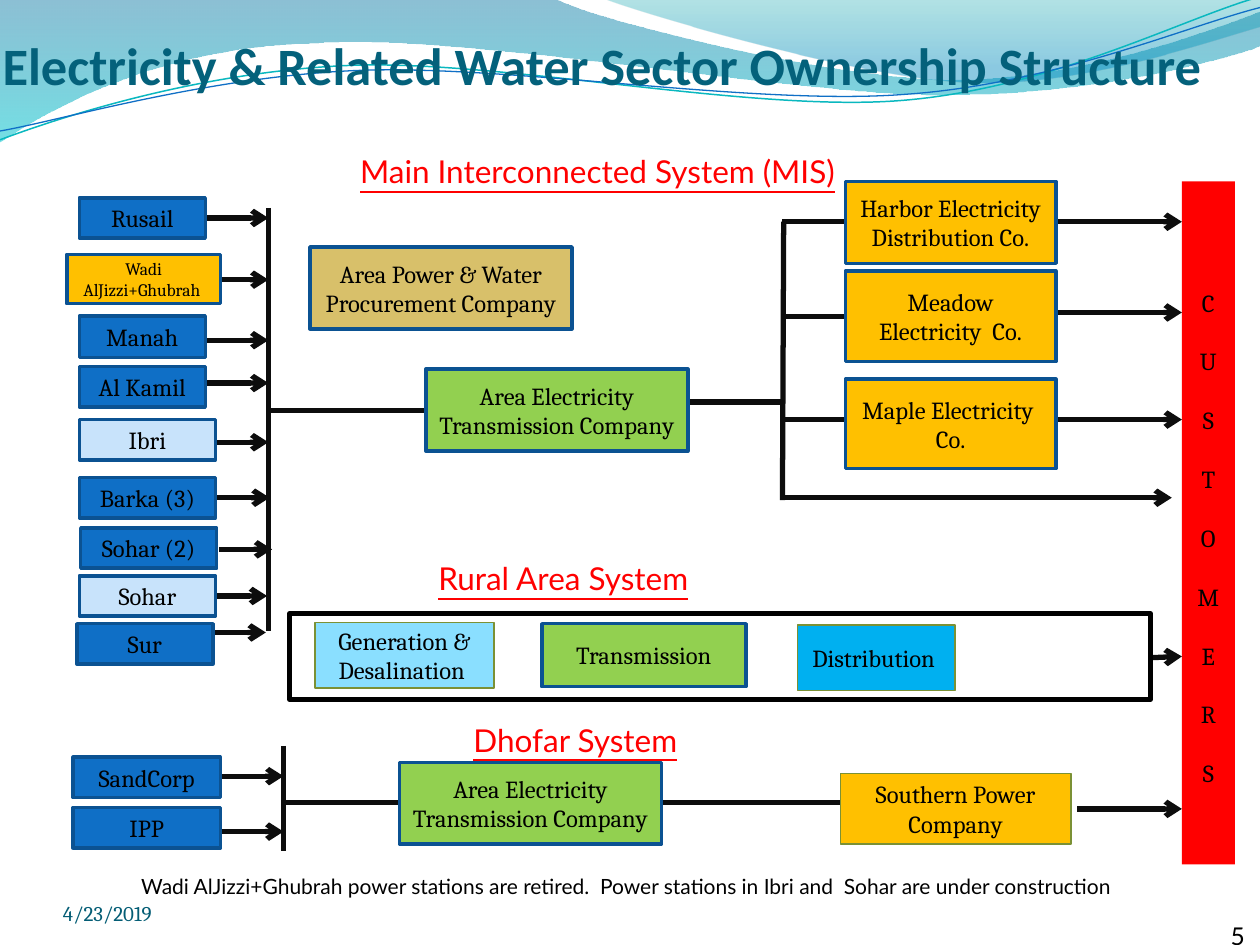
"""Build the electricity and water sector ownership slide."""
import dataclasses

import pptx
import pptx.dml.color
import pptx.enum.shapes
import pptx.enum.text
import pptx.oxml
import pptx.oxml.ns
import pptx.util

Inches = pptx.util.Inches
ALIGN = pptx.enum.text.PP_ALIGN
ANCHOR = pptx.enum.text.MSO_ANCHOR
A_NS = pptx.oxml.ns.nsdecls("a")


@dataclasses.dataclass(frozen=True)
class Theme:
    """Colours, fonts and type sizes of the slide."""
    title: str = "04617B"
    date: str = "045D75"
    ink: str = "000000"
    wire: str = "0D0D0D"
    edge: str = "0B5292"
    olive: str = "7B9135"
    blue: str = "0F6FC6"
    pale: str = "C8E3FB"
    amber: str = "FFC000"
    green: str = "92D050"
    sand: str = "D8C06A"
    aqua: str = "8ADFFF"
    sky: str = "00B0F0"
    red: str = "FF0000"
    teal: str = "0AB8BF"
    wave_blue: str = "0074A1"
    wave_cyan: str = "00C6CF"
    wave_teal: str = "00A1A9"
    wave_sky: str = "008BBF"
    serif: str = "Cambria"
    sans: str = "Lato"
    head: str = "Calibri"
    title_size: int = 30
    heading_size: int = 18
    label_size: int = 14
    note_size: int = 12
    small_size: int = 10


T = Theme()
COMPANY = "Area Electricity Transmission Company"
PLANTS = [
    ("Rusail", 0.63, 1.57, 1, 0.32, T.blue, 1.63, 2.13, 1.73),
    ("Wadi AlJizzi+Ghubrah ", 0.53, 2.02, 1.22, 0.39, T.amber, 1.74, 2.13, 2.22),
    ("Manah", 0.63, 2.51, 1, 0.33, T.blue, 1.63, 2.13, 2.7),
    ("Al Kamil", 0.63, 2.91, 1, 0.32, T.blue, 1.63, 2.13, 3.04),
    ("Ibri", 0.63, 3.33, 1.08, 0.32, T.pale, 1.71, 2.13, 3.51),
    ("Barka (3)", 0.63, 3.79, 1.08, 0.32, T.blue, 1.72, 2.14, 3.95),
    ("Sohar (2)", 0.64, 4.19, 1.08, 0.32, T.blue, 1.74, 2.16, 4.36),
    ("Sohar", 0.63, 4.57, 1.08, 0.32, T.pale, 1.71, 2.12, 4.73),
    ("Sur", 0.61, 4.95, 1.08, 0.32, T.blue, 1.7, 2.11, 5.02),
]
DHOFAR_PLANTS = [
    ("SandCorp", 0.58, 6.01, 1.17, 0.32, T.blue, 1.75, 2.25, 6.16),
    ("IPP", 0.58, 6.41, 1.17, 0.32, T.blue, 1.75, 2.25, 6.6),
]
DISTRIBUTORS = [
    ("Harbor Electricity Distribution Co.", 1.44, 0.65, 1.76, 1.76),
    ("Meadow Electricity  Co.", 2.15, 0.72, 2.51, 2.48),
    ("Maple Electricity  Co.", 3.01, 0.71, 3.33, 3.33),
]
WAVES = [
    ((0, 0),
     [[(4.4, -0.01)],
      [(4.76, 0.17), (6.64, 0.63), (7.58, 0.63)], [(8.53, 0.63), (9.58, 0.26), (10, 0.09)],
      [(10.01, 0.36)],
      [(9.83, 0.44), (8.7, 0.76), (7.46, 0.75)], [(6.22, 0.75), (3.82, 0.28), (2.57, 0.34)],
      [(1.29, 0.36), (0.46, 0.83), (-0.01, 1.13)], [(0, 0)]],
     [(0, T.wave_blue, 45), (1, T.wave_cyan, 55)]),
    ((4.79, -0.01),
     [[(5.09, 0.11), (6.82, 0.62), (7.69, 0.65)], [(8.56, 0.69), (9.61, 0.32), (10, 0.21)],
      [(10, 0)], [(4.79, -0.01)]],
     [(0, T.wave_teal, 30), (0.8, T.wave_sky, 45)]),
]
STRANDS = [
    ((0, 1.11),
     [[(0.48, 0.93), (1.58, 0.57), (2.77, 0.52)], [(3.95, 0.47), (5.93, 0.89), (7.13, 0.8)],
      [(8.33, 0.71), (9.38, 0.15), (9.98, -0.02)]], T.teal, 0.85),
    ((0, 1.04),
     [[(0.47, 0.96), (1.64, 0.61), (2.83, 0.56)], [(4.03, 0.51), (5.97, 0.84), (7.17, 0.75)],
      [(8.36, 0.67), (9.41, 0.21), (10, 0.06)]], T.blue, 0.75),
]


def rgb(value):
    """Return a colour object for a hex value."""
    return pptx.dml.color.RGBColor.from_string(value)


def write(tf, text, size=T.label_size, font=T.serif, color=T.ink, align=ALIGN.LEFT,
          anchor=ANCHOR.TOP, bold=False, underline=False, spacing=None, wrap=True):
    """Fill a text frame with one paragraph per line of text."""
    tf.word_wrap = wrap
    tf.vertical_anchor = anchor
    tf.text = text
    for p in tf.paragraphs:
        p.alignment = align
        p.line_spacing = spacing
        for r in p.runs:
            f = r.font
            f.size, f.name, f.bold, f.underline = pptx.util.Pt(size), font, bold, underline
            f.color.rgb = rgb(color)


def trim(tf, top=0):
    """Remove the insets of a text frame."""
    tf.margin_left = tf.margin_right = tf.margin_bottom = 0
    tf.margin_top = Inches(top)


def textbox(s, text, x, y, w, h, bare=False, **fmt):
    """Add a text box."""
    tf = s.shapes.add_textbox(*map(Inches, (x, y, w, h))).text_frame
    write(tf, text, **fmt)
    if bare:
        trim(tf)


def box(s, text, x, y, w, h, fill=None, line=T.edge, width=2, **fmt):
    """Add a rectangle with a centred label."""
    sp = s.shapes.add_shape(pptx.enum.shapes.MSO_SHAPE.RECTANGLE, *map(Inches, (x, y, w, h)))
    sp.shadow.inherit = False
    if fill:
        sp.fill.solid()
        sp.fill.fore_color.rgb = rgb(fill)
    else:
        sp.fill.background()
    if line:
        sp.line.color.rgb = rgb(line)
        sp.line.width = pptx.util.Pt(width)
    else:
        sp.line.fill.background()
    if text:
        write(sp.text_frame, text, align=ALIGN.CENTER, anchor=ANCHOR.MIDDLE, **fmt)


def wire(s, x1, y1, x2, y2, arrow=False):
    """Add a straight line, with an arrowhead at its end if asked."""
    c = s.shapes.add_connector(pptx.enum.shapes.MSO_CONNECTOR.STRAIGHT,
                               *map(Inches, (x1, y1, x2, y2)))
    c.line.color.rgb = rgb(T.wire)
    c.line.width = pptx.util.Pt(3)
    if arrow:
        c.line._get_or_add_ln().append(pptx.oxml.parse_xml(f'<a:tailEnd {A_NS} type="arrow"/>'))
    c._element.spPr.append(pptx.oxml.parse_xml(f"<a:effectLst {A_NS}/>"))


def outline(s, start, segments, close):
    """Add a freeform of straight (one point) and cubic (three point) segments."""
    fb = s.shapes.build_freeform(*map(Inches, start))
    fb.add_line_segments([tuple(map(Inches, seg[-1])) for seg in segments], close=close)
    sp = fb.convert_to_shape()
    sp.shadow.inherit = False
    for node, seg in zip(sp._element.findall(".//" + pptx.oxml.ns.qn("a:lnTo")), segments):
        if len(seg) == 3:
            points = "".join(f'<a:pt x="{Inches(x) - sp.left}" y="{Inches(y) - sp.top}"/>'
                             for x, y in seg)
            cubic = pptx.oxml.parse_xml(f"<a:cubicBezTo {A_NS}>{points}</a:cubicBezTo>")
            node.getparent().replace(node, cubic)
    return sp


def banner(s):
    """Draw the header waves and the strands over them."""
    for start, segments, stops in WAVES:
        sp = outline(s, start, segments, True)
        sp.line.fill.background()
        sp.fill.gradient()
        sp.fill.gradient_angle = 270
        for stop, (position, color, alpha) in zip(sp.fill.gradient_stops, stops):
            stop.position = position
            stop.color.rgb = rgb(color)
            stop._gs[0].append(pptx.oxml.parse_xml(f'<a:alpha {A_NS} val="{alpha * 1000}"/>'))
    for start, segments, color, width in STRANDS:
        sp = outline(s, start, segments, False)
        sp.fill.background()
        sp.line.color.rgb = rgb(color)
        sp.line.width = pptx.util.Pt(width)


def title(s, text):
    """Place the title in front of the banner."""
    sp = s.shapes.title
    sp.left, sp.top, sp.width, sp.height = map(Inches, (0.02, 0.25, 10.17, 0.51))
    write(sp.text_frame, text, size=T.title_size, font=T.head, color=T.title,
          anchor=ANCHOR.BOTTOM, bold=True)
    trim(sp.text_frame, 0.05)
    s.shapes._spTree.append(sp._element)


def plants(s, rows):
    """Add power stations, each with an arrow to the bus line."""
    for text, x, y, w, h, fill, tail, tip, level in rows:
        wire(s, tail, level, tip, level, True)
        box(s, text, x, y, w, h, fill, size=T.small_size if len(text) > 10 else T.label_size)


def main_system(s):
    """Draw the main interconnected system."""
    for ends in [(2.13, 1.65, 2.13, 5.01), (2.13, 3.26, 3.38, 3.26),
                 (5.46, 3.19, 6.21, 3.19), (6.22, 1.76, 6.21, 3.97)]:
        wire(s, *ends)
    wire(s, 6.21, 3.95, 9.3, 3.95, True)
    plants(s, PLANTS)
    for text, y, h, in_y, out_y in DISTRIBUTORS:
        wire(s, 6.21, in_y, 6.71, in_y)
        wire(s, 8.38, out_y, 9.38, out_y, True)
        box(s, text, 6.71, y, 1.67, h, T.amber)
    box(s, "Area Power & Water Procurement Company", 2.46, 1.96, 2.08, 0.65, T.sand)
    box(s, COMPANY, 3.38, 2.93, 2.08, 0.65, T.green)


def rural_system(s):
    """Draw the rural area system."""
    wire(s, 9.13, 5.22, 9.38, 5.21, True)
    box(s, "", 2.3, 4.87, 6.83, 0.68, line=T.ink, width=3)
    box(s, "Generation & Desalination ", 2.5, 4.94, 1.42, 0.52, T.aqua, T.olive, 0.75)
    box(s, "Transmission", 4.3, 4.95, 1.62, 0.5, T.green)
    box(s, "Distribution ", 6.33, 4.96, 1.25, 0.52, T.sky, T.olive, 0.75)


def dhofar_system(s):
    """Draw the Dhofar system."""
    wire(s, 6.67, 6.37, 2.25, 6.37)
    wire(s, 2.25, 5.92, 2.25, 6.75)
    wire(s, 8.55, 6.42, 9.38, 6.42, True)
    plants(s, DHOFAR_PLANTS)
    box(s, COMPANY, 3.17, 6.05, 2.08, 0.65, T.green)
    box(s, "Southern Power Company", 6.67, 6.14, 1.83, 0.56, T.amber, T.olive, 0.75)


def main():
    """Build and save the slide."""
    prs = pptx.Presentation()
    prs.slide_width, prs.slide_height = Inches(10), Inches(7.5)
    s = prs.slides.add_slide(prs.slide_layouts[5])
    banner(s)
    title(s, "Electricity & Related Water Sector Ownership Structure")
    box(s, "\n".join("CUSTOMERS"), 9.38, 1.44, 0.42, 5.42, T.red, None, spacing=2.0)
    main_system(s)
    rural_system(s)
    dhofar_system(s)
    for text, x, y, w in [("Main Interconnected System (MIS)", 2.76, 1.16, 5.09),
                          ("Rural Area System", 3.38, 4.39, 3.69),
                          ("Dhofar System", 3.66, 5.67, 1.84)]:
        textbox(s, text, x, y, w, 0.4, size=T.heading_size, font=T.sans, color=T.red,
                underline=True)
    textbox(s, "Wadi AlJizzi+Ghubrah power stations are retired.  Power stations in Ibri and  "
            "Sohar are under construction  ", 0.93, 6.88, 8.17, 0.3, size=T.note_size,
            font=T.sans, align=ALIGN.CENTER, wrap=False)
    textbox(s, "4/23/2019", 0.5, 6.95, 2.33, 0.4, bare=True, size=T.note_size, color=T.date,
            anchor=ANCHOR.BOTTOM)
    textbox(s, "5", 6.21, 7.14, 3.67, 0.4, bare=True, font=T.sans, align=ALIGN.RIGHT,
            anchor=ANCHOR.BOTTOM)
    prs.save("out.pptx")


if __name__ == "__main__":
    main()
